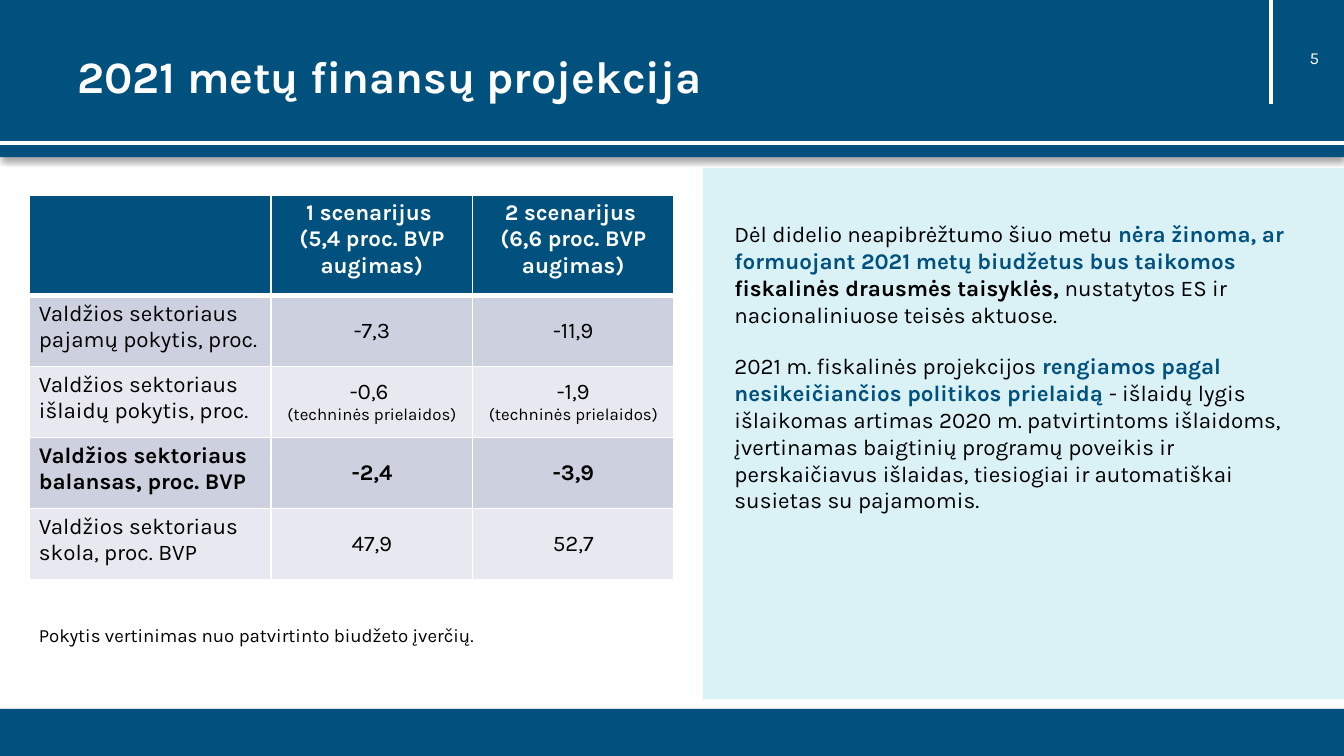
from lxml.etree import SubElement
from pptx import Presentation
from pptx.dml.color import RGBColor
from pptx.enum.shapes import MSO_CONNECTOR, MSO_SHAPE
from pptx.enum.text import MSO_ANCHOR, PP_ALIGN
from pptx.oxml import parse_xml
from pptx.oxml.ns import nsdecls, qn
from pptx.util import Inches, Pt

NAVY, WHITE, BLACK = "00517D", "FFFFFF", "000000"
PALE, DARK, LIGHT = "DAF1F6", "CDD1DF", "E8E9F0"
LEFT, MID, RIGHT = PP_ALIGN.LEFT, PP_ALIGN.CENTER, PP_ALIGN.RIGHT
WIDE, HIGH = 100, 56.25
NOTE = ("(techninės prielaidos)", {"size": 9})
ROWS = [
    ("Valdžios sektoriaus pajamų pokytis, proc.", ["-7,3"], ["-11,9"], False),
    ("Valdžios sektoriaus išlaidų pokytis, proc.", ["-0,6 ", NOTE], ["-1,9", NOTE], False),
    ("Valdžios sektoriaus balansas, proc. BVP", ["-2,4"], ["-3,9"], True),
    ("Valdžios sektoriaus skola, proc. BVP", ["47,9"], ["52,7"], False),
]
KEY = {"color": NAVY, "bold": True}
RULES = [
    "Dėl didelio neapibrėžtumo šiuo metu ",
    ("nėra žinoma, ar formuojant 2021 metų biudžetus bus taikomos ", KEY),
    ("fiskalinės drausmės taisyklės,", {"bold": True}),
    " nustatytos ES ir nacionaliniuose teisės aktuose.",
]
POLICY = [
    "2021 m. fiskalinės projekcijos ",
    ("rengiamos pagal nesikeičiančios politikos prielaidą ", KEY),
    "- išlaidų lygis išlaikomas artimas 2020 m. patvirtintoms išlaidoms, "
    "įvertinamas baigtinių programų poveikis ir perskaičiavus išlaidas, "
    "tiesiogiai ir automatiškai susietas su pajamomis.",
]


def grid(*cells):
    """Turn counts of grid cells, 100 to the slide's width, into lengths."""
    return [Inches(cell / 10) for cell in cells]


def rgb(code):
    """Turn a hex string into a colour."""
    return RGBColor.from_string(code)


def write(frame, paras, align=LEFT, pad=0.04, wrap=True, space=None, **base):
    """Fill a text frame with paragraphs, each a list of plain or formatted runs."""
    frame.word_wrap = wrap
    frame.vertical_anchor = MSO_ANCHOR.MIDDLE
    frame.margin_left = frame.margin_right = Inches(0.07)
    frame.margin_top = frame.margin_bottom = Inches(pad)
    for num, runs in enumerate(paras):
        para = frame.add_paragraph() if num else frame.paragraphs[0]
        para.alignment = align
        para.line_spacing = space
        for item in runs:
            text, extra = (item, {}) if isinstance(item, str) else item
            look = {"size": 12, "color": BLACK, "bold": False, **base, **extra}
            for part, line in enumerate(text.split("\n") if text else []):
                if part:
                    para.add_line_break()
                run = para.add_run()
                run.text = line
                run.font.name = "Karla"
                run.font.size = Pt(look["size"])
                run.font.bold = look["bold"]
                run.font.color.rgb = rgb(look["color"])


def label(slide, box, text, **look):
    """Place one line of text in a box."""
    write(slide.shapes.add_textbox(*grid(*box)).text_frame, [[text]], **look)


def block(slide, box, color):
    """Draw a plain filled rectangle."""
    shape = slide.shapes.add_shape(MSO_SHAPE.RECTANGLE, *grid(*box))
    shape.shadow.inherit = False
    shape.fill.solid()
    shape.fill.fore_color.rgb = rgb(color)
    shape.line.fill.background()
    return shape


def band(slide, box):
    """Draw a navy bar with a soft shadow below it."""
    effect = block(slide, box, NAVY).element.spPr.find(qn("a:effectLst"))
    effect.append(parse_xml(
        f'<a:outerShdw {nsdecls("a")} blurRad="39370" dist="22860" dir="5400000" '
        'rotWithShape="0"><a:srgbClr val="000000"><a:alpha val="35000"/>'
        '</a:srgbClr></a:outerShdw>'))


def rule(slide, *ends):
    """Draw a white line between two points."""
    line = slide.shapes.add_connector(MSO_CONNECTOR.STRAIGHT, *grid(*ends))
    line.line.color.rgb = rgb(WHITE)
    line.line.width = Pt(2.25)
    SubElement(line.element.spPr, qn("a:effectLst"))


def header(slide, box, title, page):
    """Draw the top bar with its rules, title and page number."""
    x, y, w, h = box
    band(slide, box)
    rule(slide, x + w - 5.4, y, x + w - 5.4, y + 7.75)
    rule(slide, x, y + h - 1.05, x + w, y + h - 1.05)
    label(slide, (x + 5.05, y + 2.8, w - 10.55, 6.1), title,
          size=24, color=WHITE, bold=True, pad=0.07, space=0.9)
    label(slide, (x + w - 5.45, y + 2.8, 4.3, 3), page, size=9, color=WHITE, align=RIGHT)


def panel(slide, box):
    """Draw the pale panel with its two paragraphs of text."""
    x, y, w, h = box
    block(slide, box, PALE)
    for top, high, runs in ((2.9, 10, RULES), (13.95, 11.5, POLICY)):
        part = block(slide, (x + 1.65, y + top, w - 2.6, high), PALE)
        write(part.text_frame, [runs])


def edge(cell, top=1, low=1):
    """Give a table cell white borders."""
    props = cell._tc.get_or_add_tcPr()
    for num, (side, width) in enumerate(zip("LRTB", (1, 1, top, low))):
        props.insert(num, parse_xml(
            f'<a:ln{side} {nsdecls("a")} w="{Pt(width)}"><a:solidFill>'
            f'<a:srgbClr val="{WHITE}"/></a:solidFill></a:ln{side}>'))


def table(slide, box):
    """Build the table that compares the two scenarios."""
    x, y, w, h = box
    grown = ("5,4", "6,6")
    heads = [f"{num} scenarijus \n({rate} proc. BVP augimas)"
             for num, rate in enumerate(grown, 1)]
    data = [("", [heads[0]], [heads[1]], True), *ROWS]
    made = slide.shapes.add_table(len(data), 3, *grid(*box)).table
    made.horz_banding = False
    for col, share in zip(made.columns, (3 / 8, 5 / 16, 5 / 16)):
        col.width = grid(w * share)[0]
    for num, (name, one, two, bold) in enumerate(data):
        made.rows[num].height = grid(5.29 if num else h - 5.29 * len(ROWS))[0]
        for col, items in enumerate(([name], one, two)):
            cell = made.cell(num, col)
            cell.fill.solid()
            cell.fill.fore_color.rgb = rgb((DARK if num % 2 else LIGHT) if num else NAVY)
            cell.margin_left = cell.margin_right = Inches(0.07)
            cell.margin_top = cell.margin_bottom = Inches(0.04)
            write(cell.text_frame, [[item] for item in items], bold=bold,
                  align=MID if col else LEFT, color=BLACK if num else WHITE)
            cell.vertical_anchor = MSO_ANCHOR.MIDDLE if num and col else MSO_ANCHOR.TOP
            edge(cell, top=3 if num == 1 else 1, low=1 if num else 3)


def main():
    """Build the slide and save it."""
    deck = Presentation()
    deck.slide_width, deck.slide_height = grid(WIDE, HIGH)
    slide = deck.slides.add_slide(deck.slide_layouts[6])
    header(slide, (0, 0, WIDE, 11.7), "2021 metų finansų projekcija", "5")
    band(slide, (0, HIGH - 3.5, WIDE, 3.5))
    panel(slide, (52.3, 12.5, WIDE - 52.3, 39.55))
    table(slide, (2.2, 14.5, 47.95, 28.65))
    label(slide, (2.2, 46.05, 34.4, 2.4),
          "Pokytis vertinimas nuo patvirtinto biudžeto įverčių.", size=10, wrap=False)
    deck.save("out.pptx")


if __name__ == "__main__":
    main()
